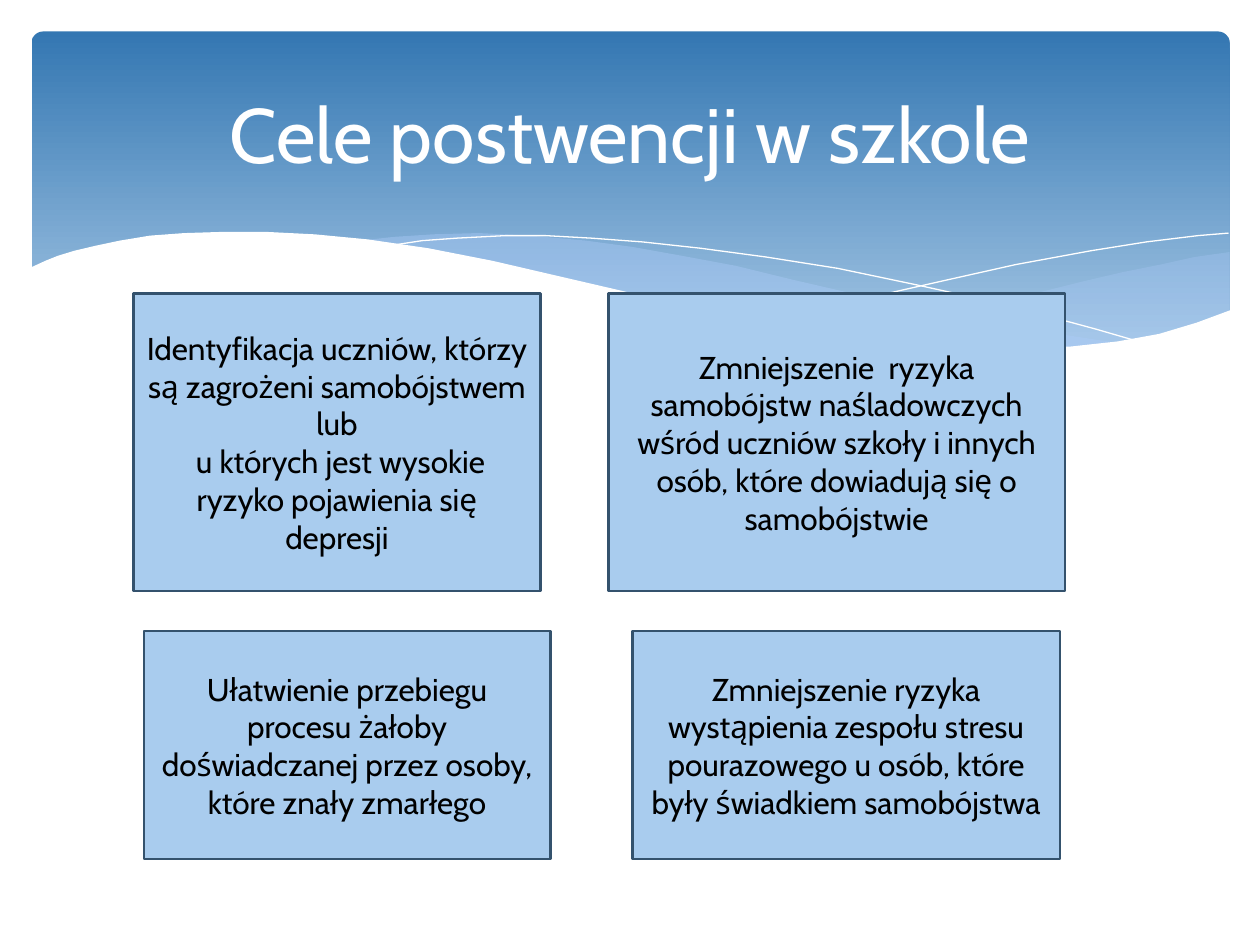
from lxml import etree
from pptx import Presentation
from pptx.dml.color import RGBColor
from pptx.enum.shapes import MSO_SHAPE
from pptx.enum.text import MSO_ANCHOR, PP_ALIGN
from pptx.oxml.ns import qn
from pptx.util import Inches, Pt

RECT, ROUND = MSO_SHAPE.RECTANGLE, MSO_SHAPE.ROUNDED_RECTANGLE
MIDDLE, CENTER = MSO_ANCHOR.MIDDLE, PP_ALIGN.CENTER
COLS, ROWS = 100, 75
COLORS = {"top": "3477B2", "low": "A1C4E3", "wave": "ACCBF9", "card": "A9CCEE",
          "edge": "34526D", "white": "FFFFFF", "black": "000000"}

# Outlines as (column, row) points
RIGHT = [(97.6, 20), (94.8, 20.4), (92.1, 21), (89.1, 21.6), (86.1, 22.3),
         (80.5, 23.7), (75.3, 24.8), (70.6, 25.7), (66.1, 26.5), (69.1, 26.9),
         (73.2, 27.4), (76.9, 27.7), (80.3, 27.8), (83.5, 27.7), (87.2, 27.4),
         (90.5, 26.9), (93.5, 26.2), (96.3, 25.2), (97.6, 24.7)]
BAND = [(89.3, 27.3), (86.6, 26.9), (80.7, 26), (74.1, 24.7), (66.8, 23.1),
        (62.9, 22.2), (58.4, 21.1), (54.1, 20.3), (50.2, 19.6), (46.5, 19.1),
        (42, 18.7), (38, 18.5), (34.4, 18.6), (31.3, 18.8), (28.6, 19.1),
        (32.3, 19.6), (36.2, 20.3), (40.4, 21.1), (44.9, 22.2), (49.1, 23.2),
        (53, 24), (58.4, 25.2), (63.4, 26.1), (68, 26.8), (72.2, 27.4),
        (76.1, 27.7), (79.6, 27.8), (83.8, 27.8), (86.7, 27.6)]
FALL = [(30.9, 19.5), (33.5, 19.1), (36.3, 18.9), (40.1, 18.7), (43.3, 18.7),
        (46.9, 18.9), (51, 19.2), (55.6, 19.7), (60.8, 20.4), (66.5, 21.3),
        (72.7, 22.6), (79.5, 24.1), (86.9, 26.1), (90.7, 27.2)]
RISE = [(61.3, 25.7), (65.3, 24.6), (69.5, 23.5), (74.8, 22.3), (80.6, 21),
        (86.6, 19.9), (91, 19.2), (95.1, 18.7), (97.5, 18.5)]
FRONT = [(97.7, 24.6), (95, 25.6), (92, 26.5), (88.7, 27.1), (85, 27.5),
         (80.9, 27.7), (76.1, 27.5), (70.8, 27), (64.8, 26.2), (60.3, 25.4),
         (55.5, 24.5), (50.3, 23.3), (44.7, 22), (39.1, 20.7), (34, 19.7),
         (29.2, 19), (25, 18.6), (21.1, 18.4), (17.7, 18.4), (14.6, 18.5),
         (11.9, 18.7), (9.5, 19.1), (7.6, 19.5), (5.9, 19.9), (4.6, 20.3),
         (3.6, 20.7), (2.3, 21.3), (2.3, 32.9), (97.7, 32.9)]

CARDS = [
    ((10.6, 23.3, 32.3, 23.6),
     "Identyfikacja uczniów, którzy są zagrożeni samobójstwem lub\n"
     " u których jest wysokie ryzyko pojawienia się depresji"),
    ((11.4, 50.1, 32.3, 18.1),
     "Ułatwienie przebiegu procesu żałoby doświadczanej przez osoby, "
     "które znały zmarłego"),
    ((48.3, 23.3, 36.2, 23.6),
     "Zmniejszenie  ryzyka samobójstw naśladowczych wśród uczniów szkoły "
     "i innych osób, które dowiadują się o samobójstwie"),
    ((50.2, 50.1, 33.9, 18.1),
     "Zmniejszenie ryzyka wystąpienia zespołu stresu pourazowego u osób, "
     "które były świadkiem samobójstwa"),
]


class Deck:
    def __init__(self):
        self.file = Presentation()
        self.file.slide_width, self.file.slide_height = Inches(10), Inches(7.5)
        self.slide = self.file.slides.add_slide(self.file.slide_layouts[5])
        self.shapes = self.slide.shapes

    def grid(self, col, row):
        return (round(col * self.file.slide_width / COLS),
                round(row * self.file.slide_height / ROWS))

    def color(self, name):
        return RGBColor.from_string(COLORS[name])

    def paint(self, shape, fill=None, line=None, width=0):
        shape.shadow.inherit = False
        if fill:
            shape.fill.solid()
            shape.fill.fore_color.rgb = self.color(fill)
        else:
            shape.fill.background()
        if line:
            shape.line.color.rgb = self.color(line)
            shape.line.width = Pt(width)
        else:
            shape.line.fill.background()

    def label(self, shape, text, size, color):
        frame = shape.text_frame
        frame.word_wrap = True
        frame.vertical_anchor = MIDDLE
        para = frame.paragraphs[0]
        para.text = text
        para.alignment = CENTER
        style = {"size": Pt(size), "name": "Cabin"}
        for run in para.runs:
            for key, value in style.items():
                setattr(run.font, key, value)
            run.font.color.rgb = self.color(color)

    def box(self, kind, area):
        return self.shapes.add_shape(kind, *self.grid(*area[:2]),
                                     *self.grid(*area[2:]))

    def banner(self, area):
        shape = self.box(ROUND, area)
        shape.adjustments[0] = 0.034
        self.paint(shape)
        shape.fill.gradient()
        shape.fill.gradient_angle = 270
        stops = zip(shape.fill.gradient_stops, ("top", "low"), (0, 0.9))
        for stop, name, place in stops:
            stop.color.rgb = self.color(name)
            stop.position = place

    def wave(self, points, fill=None, line=None, alpha=None):
        """Draw an outline, closed when filled; alpha is a percentage."""
        spots = [self.grid(*point) for point in points]
        curve = self.shapes.build_freeform(*spots[0])
        curve.add_line_segments(spots[1:], close=bool(fill))
        shape = curve.convert_to_shape()
        self.paint(shape, fill, line)
        if alpha:
            tint = shape._element.spPr.find(".//" + qn("a:srgbClr"))
            etree.SubElement(tint, qn("a:alpha"), val=str(alpha * 1000))

    def title(self, area, text):
        shape = self.shapes.title
        shape.left, shape.top = self.grid(*area[:2])
        shape.width, shape.height = self.grid(*area[2:])
        self.label(shape, text, 44, "white")
        self.shapes._spTree.append(shape._element)  # bring to front

    def card(self, area, text):
        shape = self.box(RECT, area)
        self.paint(shape, "card", "edge", 1.25)
        self.label(shape, text, 18, "black")


def main():
    deck = Deck()
    deck.banner((2.5, 2.5, 95.1, 27))
    deck.wave(RIGHT, "wave", alpha=29)
    deck.wave(BAND, "wave", alpha=40)
    deck.wave(FALL, line="white")
    deck.wave(RISE, line="white")
    deck.wave(FRONT, "white")
    deck.title((5, 3.7, 90, 13.7), "Cele postwencji w szkole")
    for area, text in CARDS:
        deck.card(area, text)
    deck.file.save("out.pptx")


if __name__ == "__main__":
    main()
